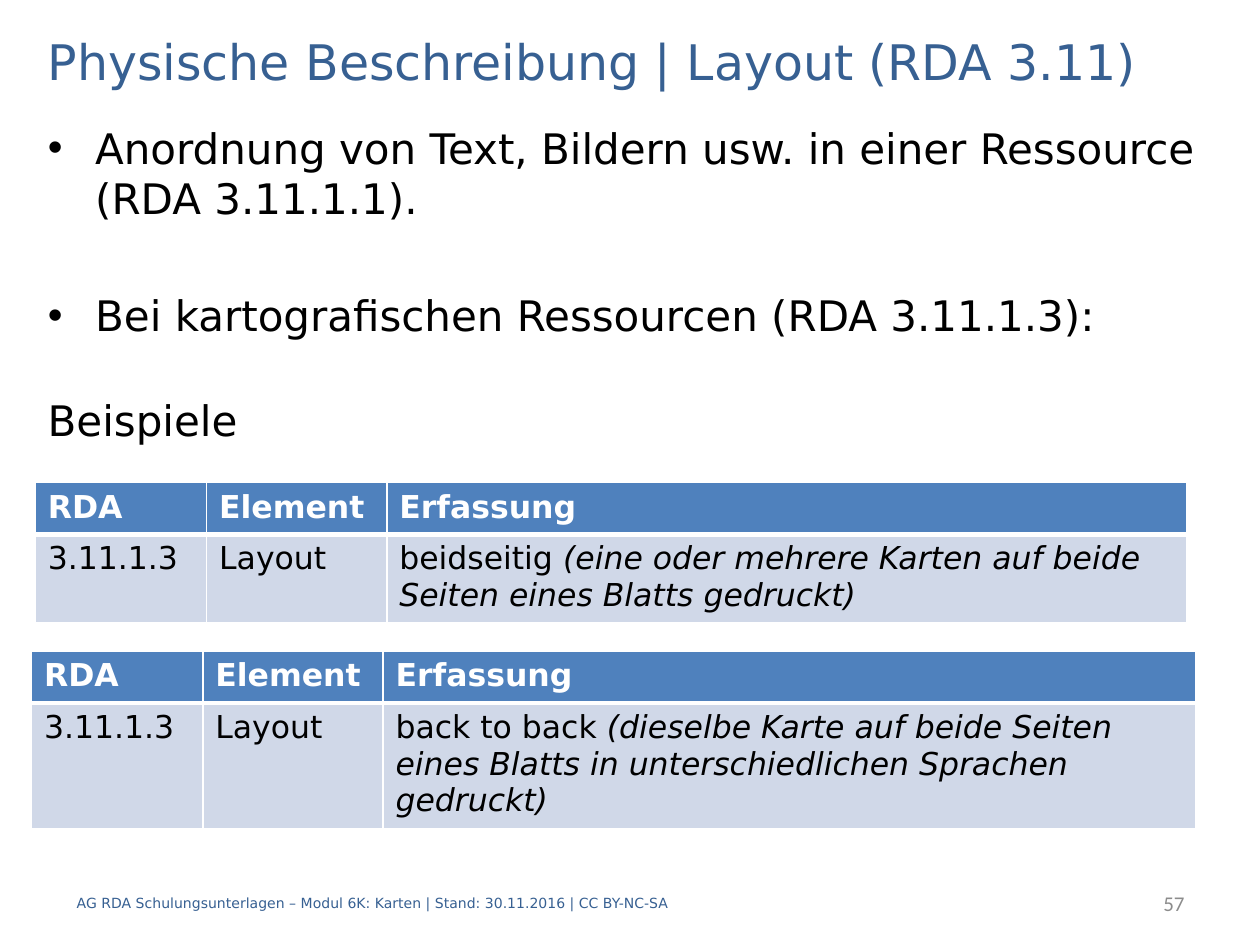
from lxml.etree import SubElement
from pptx import Presentation
from pptx.dml.color import RGBColor
from pptx.enum.text import MSO_ANCHOR, MSO_AUTO_SIZE, PP_ALIGN
from pptx.oxml.ns import qn
from pptx.util import Inches, Pt

COLORS = {
    "title": "376092",
    "text": "000000",
    "white": "FFFFFF",
    "head": "4F81BD",
    "cell": "D0D8E8",
    "number": "8C8C8C",
}
FONT = "DejaVu Sans"


def style(par, size, color, name=FONT, bold=False):
    font = par.font
    font.name, font.size, font.bold = name, Pt(size), bold
    font.color.rgb = RGBColor.from_string(COLORS[color])


def place(shape, box):
    shape.left, shape.top, shape.width, shape.height = map(Inches, box)


def add_title(slide, box, text):
    title = slide.shapes.title
    place(title, box)
    frame = title.text_frame
    frame.text = text
    frame.auto_size = MSO_AUTO_SIZE.NONE
    frame.vertical_anchor = MSO_ANCHOR.MIDDLE
    par = frame.paragraphs[0]
    par.alignment = PP_ALIGN.LEFT
    style(par, 28, "title")


def add_list(slide, box, items):
    body = slide.placeholders[1]
    place(body, box)
    frame = body.text_frame
    frame.text = "\n".join(items)
    frame.auto_size = MSO_AUTO_SIZE.NONE
    for par in frame.paragraphs:
        style(par, 24, "text")
    # One open line between the two points
    for par in frame.paragraphs[1:]:
        par.space_before = Pt(38)


def add_text(slide, box, text, size, color, name=FONT,
             anchor=MSO_ANCHOR.MIDDLE, align=PP_ALIGN.LEFT, before=0):
    frame = slide.shapes.add_textbox(*map(Inches, box)).text_frame
    frame.word_wrap = True
    frame.vertical_anchor = anchor
    frame.text = text
    par = frame.paragraphs[0]
    par.alignment = align
    par.space_before = Pt(before)
    style(par, size, color, name)


def set_edges(cell, base):
    """Draw white cell borders; the lower one has its own width."""
    props = cell._tc.get_or_add_tcPr()
    widths = {"a:lnL": 1, "a:lnR": 1, "a:lnT": 1, "a:lnB": base}
    for spot, (tag, width) in enumerate(widths.items()):
        line = SubElement(props, qn(tag), w=str(Pt(width)))
        fill = SubElement(line, qn("a:solidFill"))
        SubElement(fill, qn("a:srgbClr"), val=COLORS["white"])
        props.insert(spot, line)


def add_example(slide, box, value, note):
    left, top, width, height = box
    cols = [1.36, 1.43, width - 1.36 - 1.43]
    rows = [("RDA", "Element", "Erfassung"), ("3.11.1.3", "Layout", value)]
    table = slide.shapes.add_table(
        2, 3, *map(Inches, (left, top, width, height))).table
    for col, size in zip(table.columns, cols):
        col.width = Inches(size)
    table.rows[0].height = Inches(0.41)
    table.rows[1].height = Inches(height - 0.41)
    for r, row in enumerate(rows):
        head = r == 0
        for c, text in enumerate(row):
            cell = table.cell(r, c)
            cell.text = text
            cell.fill.solid()
            cell.fill.fore_color.rgb = RGBColor.from_string(
                COLORS["head" if head else "cell"])
            style(cell.text_frame.paragraphs[0], 18,
                  "white" if head else "text", bold=head)
            set_edges(cell, 3 if head else 1)
    # Explanation in italics after the recorded value
    run = table.cell(1, 2).text_frame.paragraphs[0].add_run()
    run.text = note
    run.font.italic = True


def main():
    prs = Presentation()
    prs.slide_width, prs.slide_height = Inches(10), Inches(7.5)
    slide = prs.slides.add_slide(prs.slide_layouts[1])

    # Title and points
    add_title(slide, (0.28, 0.2, 9.72, 0.56),
              "Physische Beschreibung | Layout (RDA 3.11)")
    add_list(slide, (0.28, 0.92, 9.45, 2.28), [
        "Anordnung von Text, Bildern usw. in einer Ressource (RDA 3.11.1.1).",
        "Bei kartografischen Ressourcen (RDA 3.11.1.3):",
    ])

    # Examples
    add_text(slide, (0.28, 3.08, 2.28, 0.55), "Beispiele", 24, "text",
             anchor=MSO_ANCHOR.TOP, before=4.8)
    add_example(slide, (0.28, 3.83, 9.14, 1.08), "beidseitig ",
                "(eine oder mehrere Karten auf beide Seiten eines Blatts "
                "gedruckt)")
    add_example(slide, (0.25, 5.17, 9.24, 1.37), "back to back ",
                "(dieselbe Karte auf beide Seiten eines Blatts in "
                "unterschiedlichen Sprachen gedruckt)")

    # Footer
    add_text(slide, (0.51, 6.97, 8.35, 0.4),
             "AG RDA Schulungsunterlagen – Modul 6K: Karten | "
             "Stand: 30.11.2016 | CC BY-NC-SA", 8, "title")
    add_text(slide, (7.91, 6.97, 1.59, 0.4), "57", 12, "number",
             name="Calibri", align=PP_ALIGN.RIGHT)

    prs.save("out.pptx")


if __name__ == "__main__":
    main()
